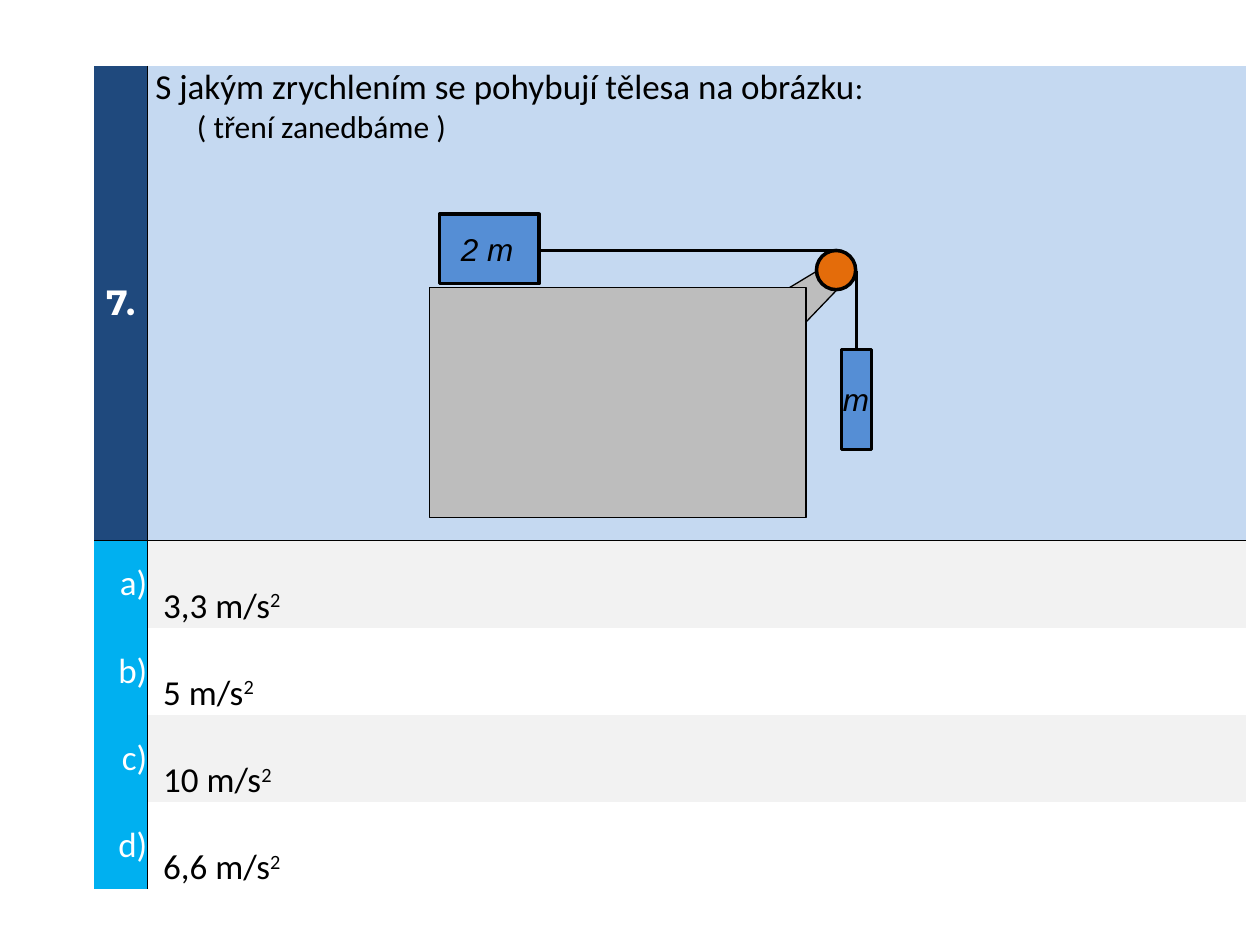
"""Build a physics quiz slide with a pulley sketch and four answers."""
from dataclasses import dataclass

from lxml.etree import SubElement
from pptx import Presentation
from pptx.dml.color import RGBColor
from pptx.enum.shapes import MSO_CONNECTOR, MSO_SHAPE
from pptx.enum.text import MSO_ANCHOR, PP_ALIGN
from pptx.oxml.ns import qn
from pptx.util import Cm, Pt

BLACK, WHITE, GRAY, BLUE = "000000", "FFFFFF", "BDBDBD", "558ED5"


@dataclass
class Part:
    kind: MSO_SHAPE
    left: float
    top: float
    width: float
    height: float
    fill: str
    line: float = 2
    turn: float = 0


@dataclass
class Cord:
    left: float
    top: float
    right: float
    end: float


@dataclass
class Label:
    text: str
    left: float
    top: float
    indent: float = 0


PARTS = [
    Part(MSO_SHAPE.FLOWCHART_MANUAL_OPERATION, 16.03, 5.26, 0.79, 1.19, GRAY, 0.75, 231.4),
    Part(MSO_SHAPE.RECTANGLE, 8.66, 5.79, 7.59, 4.65, GRAY, 0.75),
    Part(MSO_SHAPE.OVAL, 16.46, 5.05, 0.79, 0.79, "E46C0A"),
    Part(MSO_SHAPE.RECTANGLE, 8.86, 4.32, 2.01, 1.4, BLUE),
    Part(MSO_SHAPE.RECTANGLE, 16.26, 7.75, 2.01, 0.61, BLUE, turn=90),
]
CORDS = [Cord(16.87, 5.05, 10.85, 5.05), Cord(17.27, 5.46, 17.27, 7.06)]
LABELS = [Label("m", 16.56, 7.54, 0.18), Label("2 m", 9.04, 4.52)]
ANSWERS = [("a)", "3,3 m/s"), ("b)", "5 m/s"), ("c)", "10 m/s"), ("d)", "6,6 m/s")]


def paint(fill, color: str) -> None:
    fill.solid()
    fill.fore_color.rgb = RGBColor.from_string(color)


def write(para, text: str, size=20, font="Calibri", color=BLACK,
          bold=False, italic=False, raised=False) -> None:
    run = para.add_run()
    run.text = text
    style = run.font
    style.size, style.name = Pt(size), font
    style.bold, style.italic = bold, italic
    style.color.rgb = RGBColor.from_string(color)
    if raised:
        style._rPr.set("baseline", "30000")


def indent(para, size: float) -> None:
    props = para._p.get_or_add_pPr()
    props.set("marL", str(int(Cm(size))))
    props.set("indent", "0")


def dress(cell, fill: str | None, edges: str, anchor: MSO_ANCHOR):
    """Set borders, fill and anchor of a cell and return its first paragraph."""
    props = cell._tc.get_or_add_tcPr()
    for side in "LRTB":
        edge = SubElement(props, qn(f"a:ln{side}"), w=str(int(Pt(0.5))))
        if side in edges:
            solid = SubElement(edge, qn("a:solidFill"))
            SubElement(solid, qn("a:srgbClr"), val=BLACK)
        else:
            SubElement(edge, qn("a:noFill"))
    if fill:
        paint(cell.fill, fill)
    else:
        cell.fill.background()
    cell.margin_left = cell.margin_right = cell.margin_top = cell.margin_bottom = 0
    cell.vertical_anchor = anchor
    return cell.text_frame.paragraphs[0]


def draw_table(slide) -> None:
    count = len(ANSWERS) + 1
    table = slide.shapes.add_table(count, 2, Cm(1.9), Cm(1.33), Cm(23.21), Cm(16.6)).table
    table.first_row = table.horz_banding = False
    for col, width in zip(table.columns, (1.07, 22.14)):
        col.width = Cm(width)
    for row, height in zip(table.rows, [9.56] + [1.76] * len(ANSWERS)):
        row.height = Cm(height)

    para = dress(table.cell(0, 0), "1F497D", "RB", MSO_ANCHOR.MIDDLE)
    para.alignment = PP_ALIGN.CENTER
    write(para, "7.", font="Montserrat", color=WHITE, bold=True)
    cell = table.cell(0, 1)
    para = dress(cell, "C5D9F1", "LB", MSO_ANCHOR.TOP)
    indent(para, 0.16)
    write(para, "S jakým zrychlením se pohybují tělesa na obrázku")
    write(para, ":", size=18)
    para = cell.text_frame.add_paragraph()
    indent(para, 1)
    write(para, "( tření zanedbáme )", size=18)

    for row, (mark, text) in enumerate(ANSWERS, 1):
        top = "T" if row == 1 else ""
        para = dress(table.cell(row, 0), "00B0F0", "R" + top, MSO_ANCHOR.MIDDLE)
        para.alignment = PP_ALIGN.RIGHT
        write(para, mark, color=WHITE)
        fill = "F2F2F2" if row % 2 else None
        para = dress(table.cell(row, 1), fill, "L" + top, MSO_ANCHOR.BOTTOM)
        indent(para, 0.32)
        write(para, text)
        write(para, "2", raised=True)


def draw_part(slide, part: Part) -> None:
    shape = slide.shapes.add_shape(part.kind, Cm(part.left), Cm(part.top),
                                   Cm(part.width), Cm(part.height))
    shape.shadow.inherit = False
    shape.rotation = part.turn
    paint(shape.fill, part.fill)
    paint(shape.line.fill, BLACK)
    shape.line.width = Pt(part.line)


def draw_cord(slide, cord: Cord) -> None:
    line = slide.shapes.add_connector(MSO_CONNECTOR.STRAIGHT, Cm(cord.left), Cm(cord.top),
                                      Cm(cord.right), Cm(cord.end))
    paint(line.line.fill, BLACK)
    line.line.width = Pt(1.5)
    SubElement(line._element.spPr, qn("a:effectLst"))


def draw_label(slide, label: Label) -> None:
    box = slide.shapes.add_textbox(Cm(label.left), Cm(label.top), Cm(6.2), Cm(1.02))
    box.text_frame.word_wrap = True
    para = box.text_frame.paragraphs[0]
    indent(para, label.indent)
    write(para, label.text, size=18, font="Arial", italic=True)


def main() -> None:
    deck = Presentation()
    deck.slide_width, deck.slide_height = Cm(25.4), Cm(19.05)
    slide = deck.slides.add_slide(deck.slide_layouts[6])
    draw_table(slide)
    for part in PARTS:
        draw_part(slide, part)
    for cord in CORDS:
        draw_cord(slide, cord)
    for label in LABELS:
        draw_label(slide, label)
    deck.save("out.pptx")


if __name__ == "__main__":
    main()
